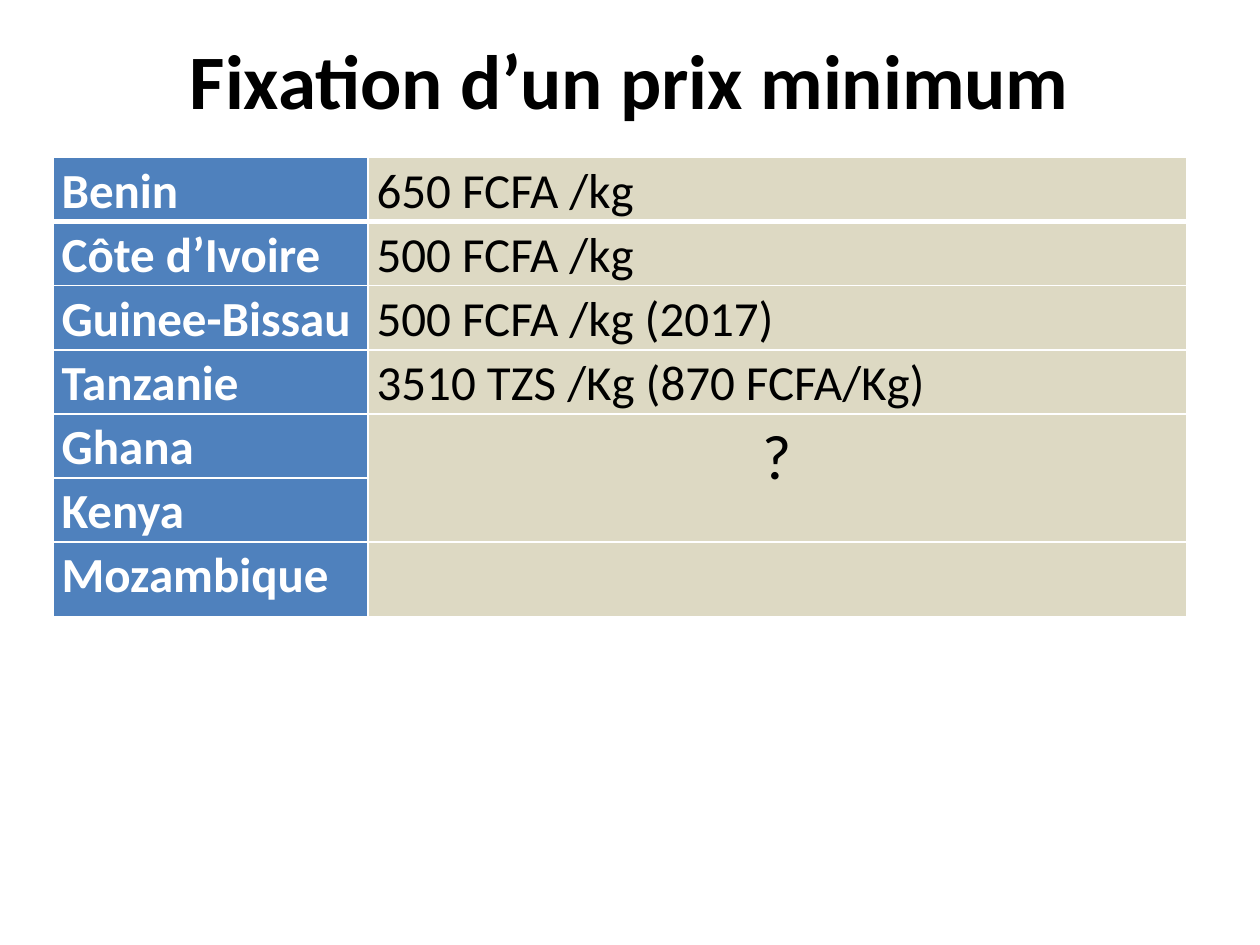
from pptx import Presentation
from pptx.dml.color import RGBColor
from pptx.enum.text import MSO_ANCHOR, PP_ALIGN
from pptx.oxml.ns import qn
from pptx.util import Pt
from lxml.etree import SubElement


def color(code):
    return RGBColor.from_string(code)


def border(cell, side, width):
    line = SubElement(cell._tc.get_or_add_tcPr(), qn("a:ln" + side), w=str(Pt(width)))
    paint = SubElement(line, qn("a:solidFill"))
    SubElement(paint, qn("a:srgbClr"), val="FFFFFF")


deck = Presentation()
deck.slide_width, deck.slide_height = Pt(720), Pt(540)
slide = deck.slides.add_slide(deck.slide_layouts[5])

title = slide.shapes.title
title.left, title.top, title.width, title.height = Pt(36), Pt(0), Pt(648), Pt(90)
frame = title.text_frame
frame.vertical_anchor = MSO_ANCHOR.MIDDLE
para = frame.paragraphs[0]
para.alignment = PP_ALIGN.CENTER
run = para.add_run()
run.text = "Fixation d’un prix minimum"
run.font.name, run.font.size, run.font.bold = "Calibri", Pt(44), True
run.font.color.rgb = color("000000")

prices = [
    ("Benin", "650 FCFA /kg"),
    ("Côte d’Ivoire", "500 FCFA /kg"),
    ("Guinee-Bissau", "500 FCFA /kg (2017)"),
    ("Tanzanie", "3510 TZS /Kg (870 FCFA/Kg)"),
    ("Ghana", "?"),
    ("Kenya", ""),
    ("Mozambique", ""),
]
looks = [("4F81BD", "FFFFFF", True), ("DDD9C3", "000000", False)]

table = slide.shapes.add_table(len(prices), 2, Pt(30.24), Pt(90), Pt(648), Pt(262)).table
table.first_row = table.horz_banding = False
table.columns[0].width, table.columns[1].width = Pt(180), Pt(468)

for row, texts in enumerate(prices):
    table.rows[row].height = Pt(42.7 if row == len(prices) - 1 else 36.6)
    for col, (text, (fill, ink, bold)) in enumerate(zip(texts, looks)):
        cell = table.cell(row, col)
        cell.margin_left = cell.margin_right = Pt(5)
        cell.margin_top = cell.margin_bottom = Pt(0)
        for side in "LRTB":
            thick = (row, side) in [(0, "B"), (1, "T")]
            border(cell, side, 3 if thick else 1)
        cell.fill.solid()
        cell.fill.fore_color.rgb = color(fill)
        if text:
            para = cell.text_frame.paragraphs[0]
            para.line_spacing = 1.07
            para.alignment = PP_ALIGN.CENTER if text == "?" else PP_ALIGN.LEFT
            run = para.add_run()
            run.text = text
            run.font.name, run.font.bold = "Calibri", bold
            run.font.size = Pt(36 if text == "?" else 28)
            run.font.color.rgb = color(ink)

table.cell(4, 1).merge(table.cell(5, 1))

deck.save("out.pptx")
